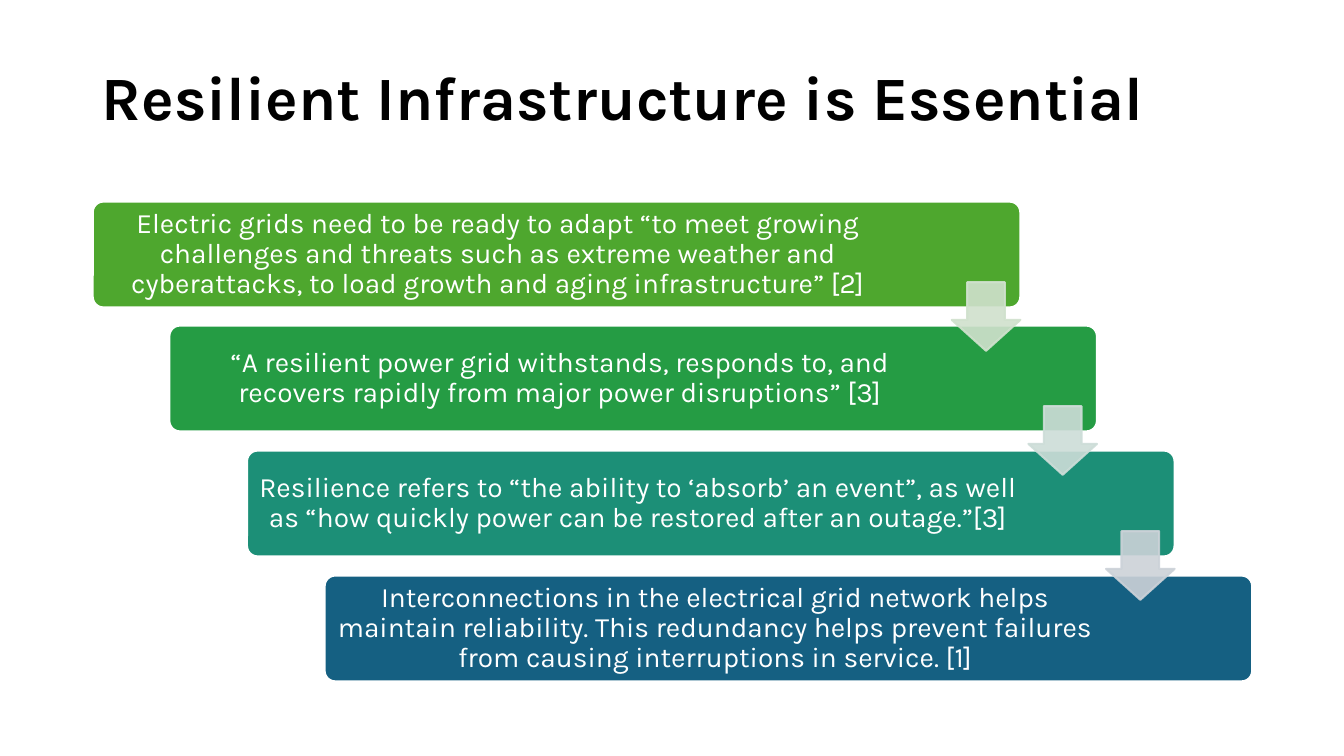
import pptx
import pptx.dml.color
import pptx.enum.shapes
import pptx.enum.text
import pptx.oxml.ns
import pptx.util
from lxml import etree

SHAPE = pptx.enum.shapes.MSO_SHAPE
ALIGN = pptx.enum.text.PP_ALIGN
ANCHOR = pptx.enum.text.MSO_ANCHOR

STEPS = [
    ("Electric grids need to be ready to adapt “to meet growing challenges and threats such as "
     "extreme weather and cyberattacks, to load growth and aging infrastructure” [2]", "4EA72E", 124),
    ("“A resilient power grid withstands, responds to, and recovers rapidly from major power "
     "disruptions” [3]", "259C44", 153),
    ("Resilience refers to “the ability to ‘absorb’ an event”, as well as “how quickly power can "
     "be restored after an outage.”[3]", "1C8F77", 152),
    ("Interconnections in the electrical grid network helps maintain reliability. This redundancy "
     "helps prevent failures from causing interruptions in service. [1]", "156082", 153),
]
ARROW_COLORS = ["D0E1CD", "CDDDD8", "CCD2D8"]


def px(n):
    return pptx.util.Emu(n * 9144)


def rgb(value):
    return pptx.dml.color.RGBColor.from_string(value)


class Deck:
    font = "Karla"

    def __init__(self):
        self.prs = pptx.Presentation()
        self.prs.slide_width, self.prs.slide_height = px(1333), px(750)
        self.s = self.prs.slides.add_slide(self.prs.slide_layouts[5])

    def set_text(self, tf, text, size, color, align, bold=False):
        tf.word_wrap = True
        tf.vertical_anchor = ANCHOR.MIDDLE
        p = tf.paragraphs[0]
        p.text = text
        p.alignment = align
        p.line_spacing = 0.9
        p.font.name = self.font
        p.font.size = pptx.util.Pt(size)
        p.font.bold = bold
        p.font.color.rgb = rgb(color)

    def title(self, text, x, y, w, h):
        sp = self.s.shapes.title
        sp.left, sp.top, sp.width, sp.height = px(x), px(y), px(w), px(h)
        self.set_text(sp.text_frame, text, 44, "000000", ALIGN.LEFT, True)

    def shape(self, kind, x, y, w, h, fill, line, adjustments):
        sp = self.s.shapes.add_shape(kind, px(x), px(y), px(w), px(h))
        sp.shadow.inherit = False
        for i, value in enumerate(adjustments):
            sp.adjustments[i] = value
        sp.fill.solid()
        sp.fill.fore_color.rgb = rgb(fill)
        sp.line.color.rgb = rgb(line)
        sp.line.width = pptx.util.Pt(1.5)
        return sp

    def bar(self, text, x, y, fill, right_inset):
        sp = self.shape(SHAPE.ROUNDED_RECTANGLE, x, y, 920, 105, fill, "FFFFFF", [0.1])
        tf = sp.text_frame
        tf.margin_left = tf.margin_top = tf.margin_bottom = px(8)
        tf.margin_right = px(right_inset)
        self.set_text(tf, text, 20, "FFFFFF", ALIGN.CENTER)

    def arrow(self, x, y, color):
        sp = self.shape(SHAPE.DOWN_ARROW, x, y, 68, 68, color, color, [0.55, 0.45])
        for clr in sp._element.spPr.iter(pptx.oxml.ns.qn("a:srgbClr")):
            etree.SubElement(clr, pptx.oxml.ns.qn("a:alpha"), val="90000")


def main():
    deck = Deck()
    deck.title("Resilient Infrastructure is Essential", 91, 38, 1150, 124)
    offsets = [(230 * i // 3, 371 * i // 3) for i in range(len(STEPS))]
    for (dx, dy), (text, fill, right_inset) in zip(offsets, STEPS):
        deck.bar(text, 92 + dx, 200 + dy, fill, right_inset)
    for (dx, dy), color in zip(offsets, ARROW_COLORS):
        deck.arrow(944 + dx, 280 + dy, color)
    deck.prs.save("out.pptx")


if __name__ == "__main__":
    main()
